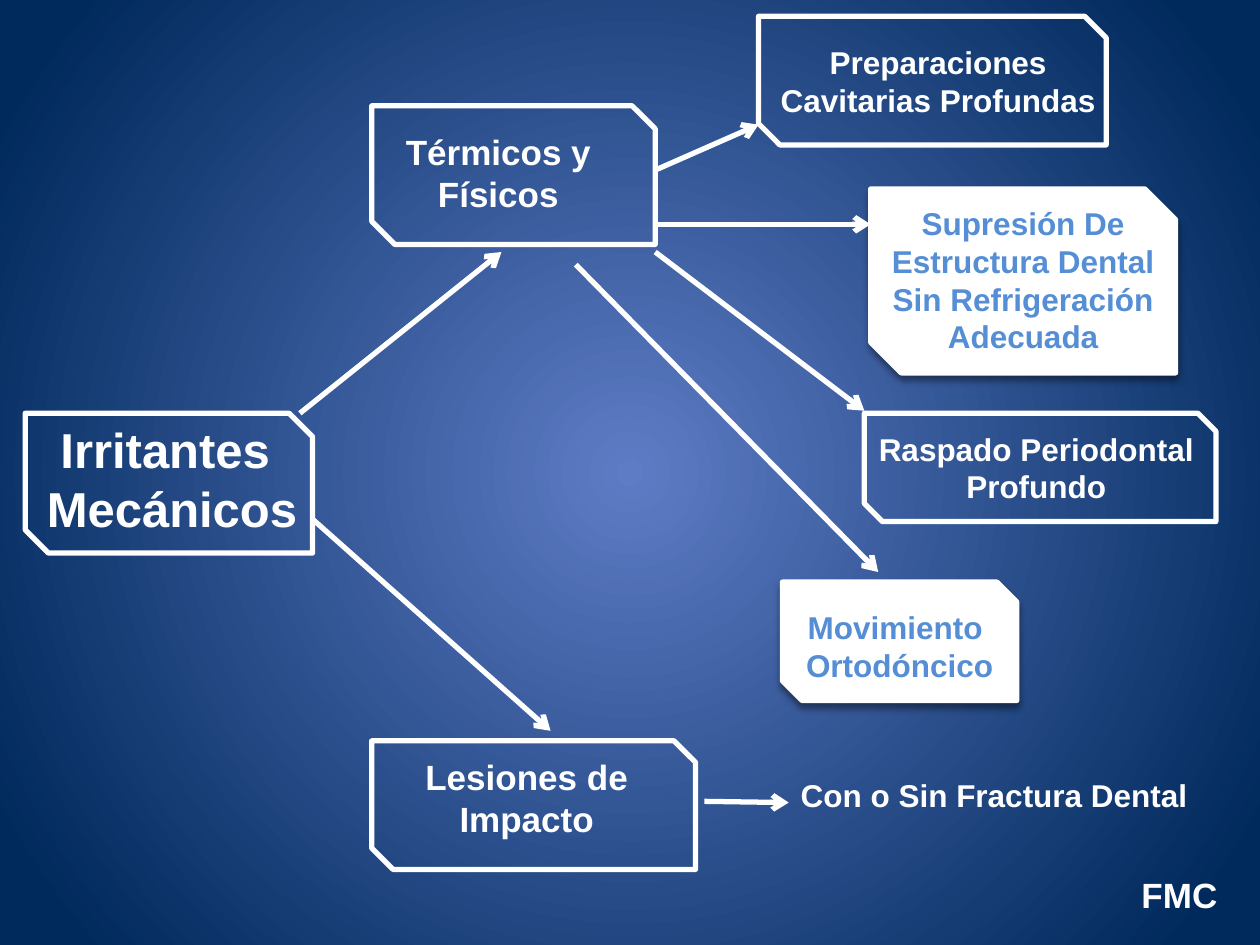
from dataclasses import dataclass

from lxml.etree import SubElement
from pptx import Presentation
from pptx.dml.color import RGBColor
from pptx.enum.shapes import MSO_CONNECTOR, MSO_SHAPE
from pptx.enum.text import MSO_ANCHOR, MSO_AUTO_SIZE, PP_ALIGN
from pptx.oxml.ns import qn
from pptx.shapes.base import BaseShape
from pptx.slide import Slide
from pptx.util import Inches, Pt


@dataclass(frozen=True)
class Theme:
    font: str = "Arial"
    white: RGBColor = RGBColor(0xFF, 0xFF, 0xFF)
    sky: RGBColor = RGBColor(0x55, 0x8E, 0xD5)
    glow: RGBColor = RGBColor(0x5E, 0x7C, 0xC5)
    navy: RGBColor = RGBColor(0x00, 0x29, 0x5C)
    root_size: int = 28
    branch_size: int = 20
    leaf_size: int = 18
    line_width: int = 3


@dataclass(frozen=True)
class Area:
    left: float
    top: float
    width: float
    height: float

    def lengths(self) -> list[Inches]:
        return [Inches(v) for v in (self.left, self.top, self.width, self.height)]


@dataclass(frozen=True)
class Frame:
    area: Area
    filled: bool = False


@dataclass(frozen=True)
class Label:
    area: Area
    lines: tuple[str, ...]
    size: int
    color: RGBColor
    wrap: bool = False
    align: PP_ALIGN = PP_ALIGN.CENTER
    anchor: MSO_ANCHOR = MSO_ANCHOR.TOP


@dataclass(frozen=True)
class Arrow:
    start: tuple[float, float]
    end: tuple[float, float]


THEME = Theme()

FILLED_FRAMES = (
    Frame(Area(6.21, 4.62, 1.86, 0.94), True),
    Frame(Area(6.91, 1.5, 2.42, 1.46), True),
)
OUTLINED_FRAMES = (
    Frame(Area(0.2, 3.28, 2.28, 1.11)),
    Frame(Area(2.95, 0.84, 2.25, 1.1)),
    Frame(Area(2.95, 5.88, 2.57, 1.02)),
    Frame(Area(6.02, 0.13, 2.76, 1.02)),
    Frame(Area(6.86, 3.28, 2.79, 0.86)),
)
ROOT = Label(Area(0.26, 3.28, 2.21, 1.04), ("Irritantes ", "Mecánicos "),
             THEME.root_size, THEME.white)
LABELS = (
    Label(Area(3.11, 0.99, 1.69, 0.77), ("Térmicos y ", "Físicos"),
          THEME.branch_size, THEME.white),
    Label(Area(5.87, 0.29, 3.15, 0.71), ("Preparaciones Cavitarias Profundas",),
          THEME.leaf_size, THEME.white, wrap=True),
    Label(Area(6.91, 1.57, 2.42, 1.31),
          ("Supresión De Estructura Dental Sin Refrigeración Adecuada",),
          THEME.leaf_size, THEME.sky, wrap=True),
    Label(Area(6.81, 3.36, 2.83, 0.71), ("Raspado Periodontal Profundo",),
          THEME.leaf_size, THEME.white, wrap=True),
    Label(Area(6.29, 4.78, 1.7, 0.71), ("Movimiento ", "Ortodóncico"),
          THEME.leaf_size, THEME.sky),
    Label(Area(3.27, 5.95, 1.82, 0.77), ("Lesiones de ", "Impacto"),
          THEME.branch_size, THEME.white),
    Label(Area(6.24, 6.11, 3.3, 0.4), ("Con o Sin Fractura Dental",),
          THEME.leaf_size, THEME.white),
    Label(Area(8.89, 6.9, 0.87, 0.4), ("FMC",), THEME.branch_size, THEME.white,
          wrap=True, align=PP_ALIGN.RIGHT, anchor=MSO_ANCHOR.MIDDLE),
)
ARROWS = (
    Arrow((2.38, 3.28), (3.98, 2)),
    Arrow((2.48, 4.12), (4.37, 5.8)),
    Arrow((5.59, 6.36), (6.26, 6.37)),
    Arrow((5.2, 1.35), (6.02, 0.99)),
    Arrow((5.2, 1.78), (6.91, 1.78)),
    Arrow((5.2, 2), (6.86, 3.26)),
    Arrow((4.57, 2.1), (6.97, 4.54)),
)


def paint_background(page: Slide) -> None:
    fill = page.background.fill
    fill.gradient()
    stops = ((0, THEME.glow), (0.92, THEME.navy))
    for stop, (position, color) in zip(fill.gradient_stops, stops):
        stop.position = position
        stop.color.rgb = color
    gradient = page.element.find(".//" + qn("a:gradFill"))
    gradient.remove(gradient.find(qn("a:lin")))
    radial = SubElement(gradient, qn("a:path"), path="circle")
    SubElement(radial, qn("a:fillToRect"), l="50000", t="50000", r="50000", b="50000")


def add_shadow(shape: BaseShape) -> None:
    effects = shape.element.spPr.find(qn("a:effectLst"))
    shadow = SubElement(effects, qn("a:outerShdw"), blurRad=str(Pt(4)),
                        dist=str(Pt(3)), dir="5400000", rotWithShape="0")
    color = SubElement(shadow, qn("a:srgbClr"), val="000000")
    SubElement(color, qn("a:alpha"), val="40000")


def add_frame(page: Slide, frame: Frame) -> None:
    shape = page.shapes.add_shape(MSO_SHAPE.SNIP_2_DIAG_RECTANGLE, *frame.area.lengths())
    shape.shadow.inherit = False
    shape.line.color.rgb = THEME.white
    shape.line.width = Pt(THEME.line_width)
    if frame.filled:
        shape.fill.solid()
        shape.fill.fore_color.rgb = THEME.white
        add_shadow(shape)
    else:
        shape.fill.background()


def write_label(box: BaseShape, label: Label) -> None:
    box.left, box.top, box.width, box.height = label.area.lengths()
    text = box.text_frame
    text.word_wrap = label.wrap
    text.auto_size = MSO_AUTO_SIZE.SHAPE_TO_FIT_TEXT
    text.vertical_anchor = label.anchor
    for index, line in enumerate(label.lines):
        para = text.add_paragraph() if index else text.paragraphs[0]
        para.alignment = label.align
        span = para.add_run()
        span.text = line
        span.font.name = THEME.font
        span.font.size = Pt(label.size)
        span.font.bold = True
        span.font.color.rgb = label.color


def add_arrow(page: Slide, arrow: Arrow) -> None:
    points = [Inches(v) for v in (*arrow.start, *arrow.end)]
    connector = page.shapes.add_connector(MSO_CONNECTOR.STRAIGHT, *points)
    connector.line.color.rgb = THEME.white
    connector.line.width = Pt(THEME.line_width)
    properties = connector.element.spPr
    SubElement(properties.find(qn("a:ln")), qn("a:tailEnd"), type="arrow")
    SubElement(properties, qn("a:effectLst"))


def main() -> None:
    deck = Presentation()
    deck.slide_width, deck.slide_height = Inches(10), Inches(7.5)
    page = deck.slides.add_slide(deck.slide_layouts[5])
    paint_background(page)
    write_label(page.shapes.title, ROOT)
    for frame in FILLED_FRAMES:
        add_frame(page, frame)
    for label in LABELS:
        write_label(page.shapes.add_textbox(*label.area.lengths()), label)
    for frame in OUTLINED_FRAMES:
        add_frame(page, frame)
    for arrow in ARROWS:
        add_arrow(page, arrow)
    deck.save("out.pptx")


if __name__ == "__main__":
    main()
